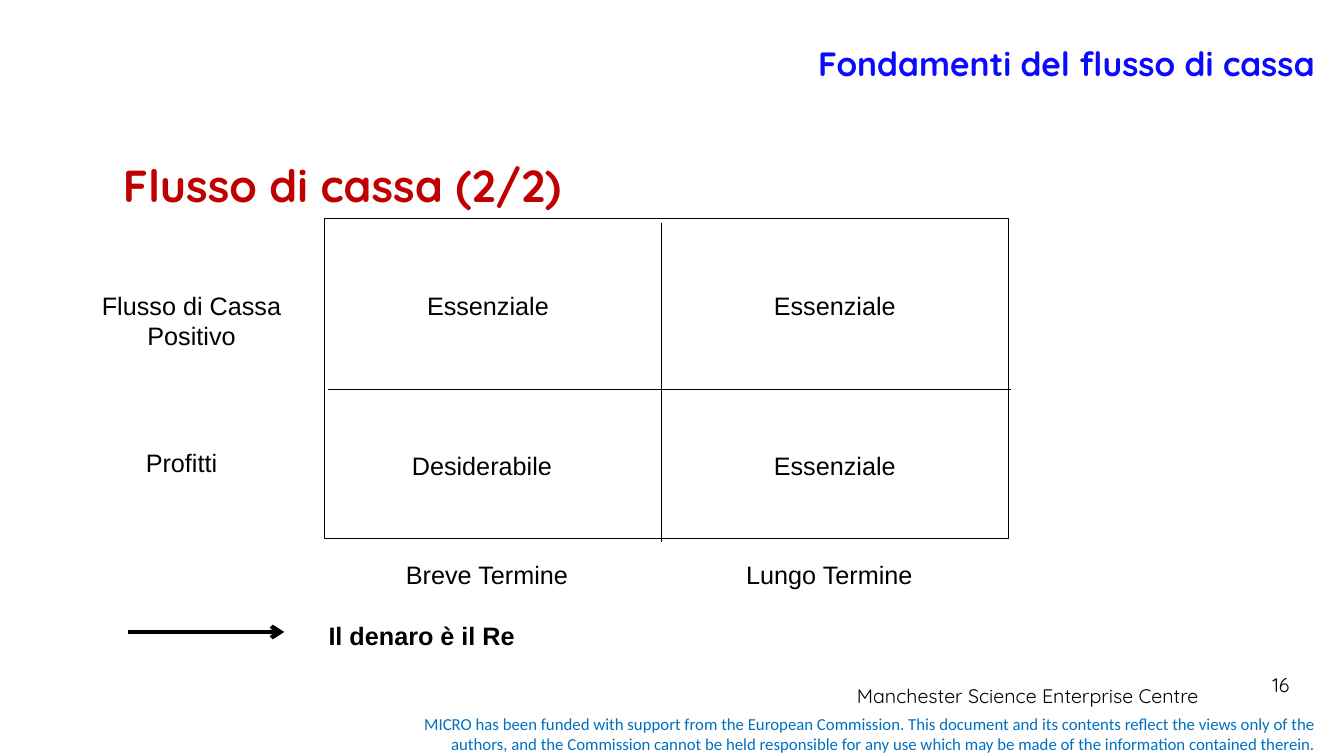
import pptx
import pptx.dml.color
import pptx.enum.shapes
import pptx.enum.text
import pptx.oxml
import pptx.oxml.ns
import pptx.util

Inches = pptx.util.Inches
Align = pptx.enum.text.PP_ALIGN
Anchor = pptx.enum.text.MSO_ANCHOR
COLORS = {"black": "000000", "title": "0B0AFD", "heading": "C00000", "funding": "0070C0"}


class CashFlowSlide:
    """Holds the style and the current slide, and draws its elements."""

    def __init__(self, slide):
        self.slide = slide

    def color(self, name):
        return pptx.dml.color.RGBColor.from_string(COLORS[name])

    def text(self, wording, left, top, width, height, size=18, font="Arial", color="black",
             bold=False, align=Align.CENTER, anchor=Anchor.TOP, wrap=True):
        box = self.slide.shapes.add_textbox(Inches(left), Inches(top), Inches(width), Inches(height))
        frame = box.text_frame
        frame.word_wrap = wrap
        frame.vertical_anchor = anchor
        frame.text = wording
        paragraph = frame.paragraphs[0]
        paragraph.alignment = align
        for run in paragraph.runs:
            run.font.name = font
            run.font.size = pptx.util.Pt(size)
            run.font.bold = bold
            run.font.color.rgb = self.color(color)

    def frame(self, left, top, width, height):
        outline = self.slide.shapes.add_shape(
            pptx.enum.shapes.MSO_SHAPE.RECTANGLE,
            Inches(left), Inches(top), Inches(width), Inches(height))
        outline.shadow.inherit = False
        outline.fill.background()
        outline.line.color.rgb = self.color("black")
        outline.line.width = pptx.util.Pt(0.75)

    def line(self, x1, y1, x2, y2, weight=0.75, arrow=False):
        rule = self.slide.shapes.add_connector(
            pptx.enum.shapes.MSO_CONNECTOR.STRAIGHT,
            Inches(x1), Inches(y1), Inches(x2), Inches(y2))
        rule.line.color.rgb = self.color("black")
        rule.line.width = pptx.util.Pt(weight)
        if arrow:
            tip = pptx.oxml.parse_xml(f'<a:tailEnd {pptx.oxml.ns.nsdecls("a")} type="arrow"/>')
            rule.line._get_or_add_ln().append(tip)
        no_shadow = pptx.oxml.parse_xml(f'<a:effectLst {pptx.oxml.ns.nsdecls("a")}/>')
        rule._element.spPr.append(no_shadow)


def main():
    deck = pptx.Presentation()
    deck.slide_width, deck.slide_height = Inches(13.33), Inches(7.5)
    page = CashFlowSlide(deck.slides.add_slide(deck.slide_layouts[6]))

    page.text("MICRO has been funded with support from the European Commission. This document and its "
              "contents reflect the views only of the authors, and the Commission cannot be held "
              "responsible for any use which may be made of the information contained therein.",
              3.75, 7.03, 9.4, 0.5, 12, "Calibri", "funding",
              align=Align.RIGHT, anchor=Anchor.MIDDLE)
    page.text("Manchester Science Enterprise Centre", 7.82, 6.74, 4.75, 0.52, 14, "Quicksand")
    page.text("16", 12.52, 6.63, 0.42, 0.34, 14, "Quicksand", align=Align.LEFT, wrap=False)
    page.text("Fondamenti del flusso di cassa", 1.14, 0, 12, 1.25, 24, "Quicksand", "title",
              bold=True, align=Align.RIGHT, anchor=Anchor.MIDDLE)
    page.text("Flusso di cassa (2/2)", 1.12, 1.52, 4.62, 0.64, 32, "Quicksand", "heading",
              bold=True, align=Align.LEFT)

    page.frame(3.22, 2.17, 6.78, 3.17)
    page.line(6.56, 2.21, 6.56, 5.38)
    page.line(3.25, 3.86, 10.03, 3.86)

    labels = [
        ("Flusso di Cassa Positivo", 0.62, 2.83, 2.56, 0.71),
        ("Profitti", 0.91, 4.39, 1.78, 0.86),
        ("Essenziale", 3.56, 2.83, 2.56, 0.4),
        ("Essenziale", 7, 2.83, 2.56, 0.4),
        ("Desiderabile", 3.56, 4.42, 2.44, 0.4),
        ("Essenziale", 7, 4.42, 2.56, 0.4),
        ("Breve Termine", 3.33, 5.5, 3, 0.4),
        ("Lungo Termine", 6.78, 5.5, 2.89, 0.4),
    ]
    for label in labels:
        page.text(*label)

    page.text("Il denaro è il Re", 3.16, 6.11, 5.89, 0.4, bold=True, align=Align.LEFT)
    page.line(1.27, 6.27, 2.82, 6.27, weight=3, arrow=True)
    deck.save("out.pptx")


if __name__ == "__main__":
    main()
